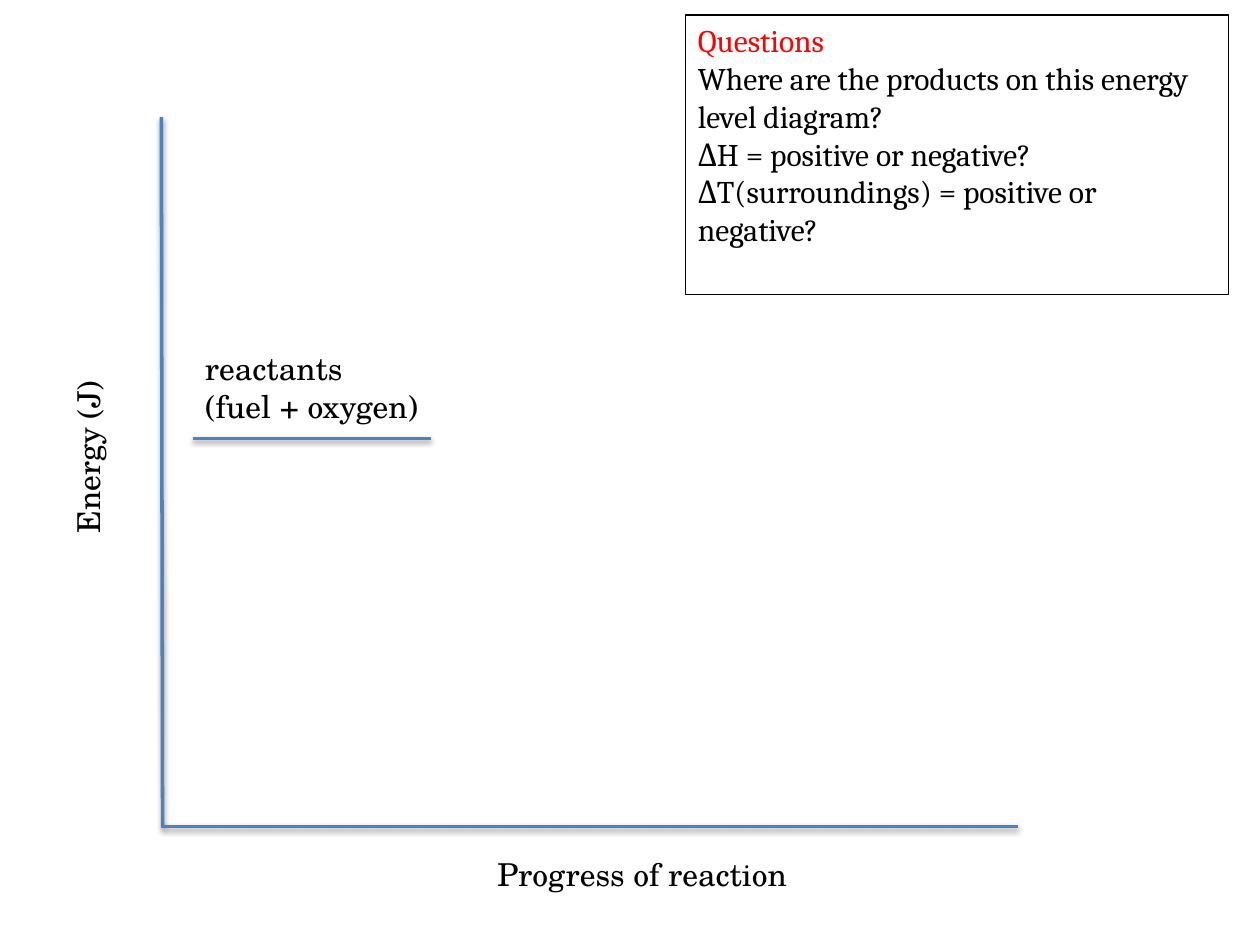
"""Build an energy level diagram slide with a box of questions."""
from pptx import Presentation
from pptx.dml.color import RGBColor
from pptx.enum import shapes, text
from pptx.util import Pt

BLACK, RED, BLUE = "000000", "FF0000", "4F81BD"
LABEL_FONT, QUESTION_FONT = "TeX Gyre Schola", "Cambria"

LINES = [
    ((92.2, 67), (92.9, 472.3)),
    ((92.2, 472.3), (581.8, 472.3)),
    ((110.2, 250.6), (246.2, 250.6)),
]
LABELS = [
    (["Progress of reaction"], (277.2, 485.3, 269.3, 29), 0),
    (["reactants", "(fuel + oxygen)"], (110.2, 195.8, 152, 51), 0),
    (["Energy (J)"], (-84.2, 162.7, 269.3, 29), 270),
]
QUESTION_BOX = (391.7, 8.6, 310.3, 159.8)
QUESTIONS = [
    ("Questions", RED),
    ("Where are the products on this energy level diagram?", BLACK),
    ("ΔH = positive or negative?", BLACK),
    ("ΔT(surroundings) = positive or negative?", BLACK),
]


def color(value):
    return RGBColor.from_string(value)


def write(shape, lines, font_name):
    frame = shape.text_frame
    frame.word_wrap = True
    frame.vertical_anchor = text.MSO_ANCHOR.TOP
    for index, (line, line_color) in enumerate(lines):
        paragraph = frame.add_paragraph() if index else frame.paragraphs[0]
        paragraph.alignment = text.PP_ALIGN.LEFT
        run = paragraph.add_run()
        run.text = line
        run.font.name = font_name
        run.font.size = Pt(18)
        run.font.color.rgb = color(line_color)


def main():
    presentation = Presentation()
    presentation.slide_width, presentation.slide_height = Pt(720), Pt(540)
    slide = presentation.slides.add_slide(presentation.slide_layouts[6])

    for start, end in LINES:
        line = slide.shapes.add_connector(
            shapes.MSO_CONNECTOR.STRAIGHT, *map(Pt, start + end))
        line.line.color.rgb = color(BLUE)
        line.line.width = Pt(2)

    for lines, place, rotation in LABELS:
        label = slide.shapes.add_textbox(*map(Pt, place))
        label.rotation = rotation
        write(label, [(line, BLACK) for line in lines], LABEL_FONT)

    box = slide.shapes.add_shape(
        shapes.MSO_SHAPE.RECTANGLE, *map(Pt, QUESTION_BOX))
    box.shadow.inherit = False
    box.fill.background()
    box.line.color.rgb = color(BLACK)
    box.line.width = Pt(0.75)
    write(box, QUESTIONS, QUESTION_FONT)

    presentation.save("out.pptx")


if __name__ == "__main__":
    main()
